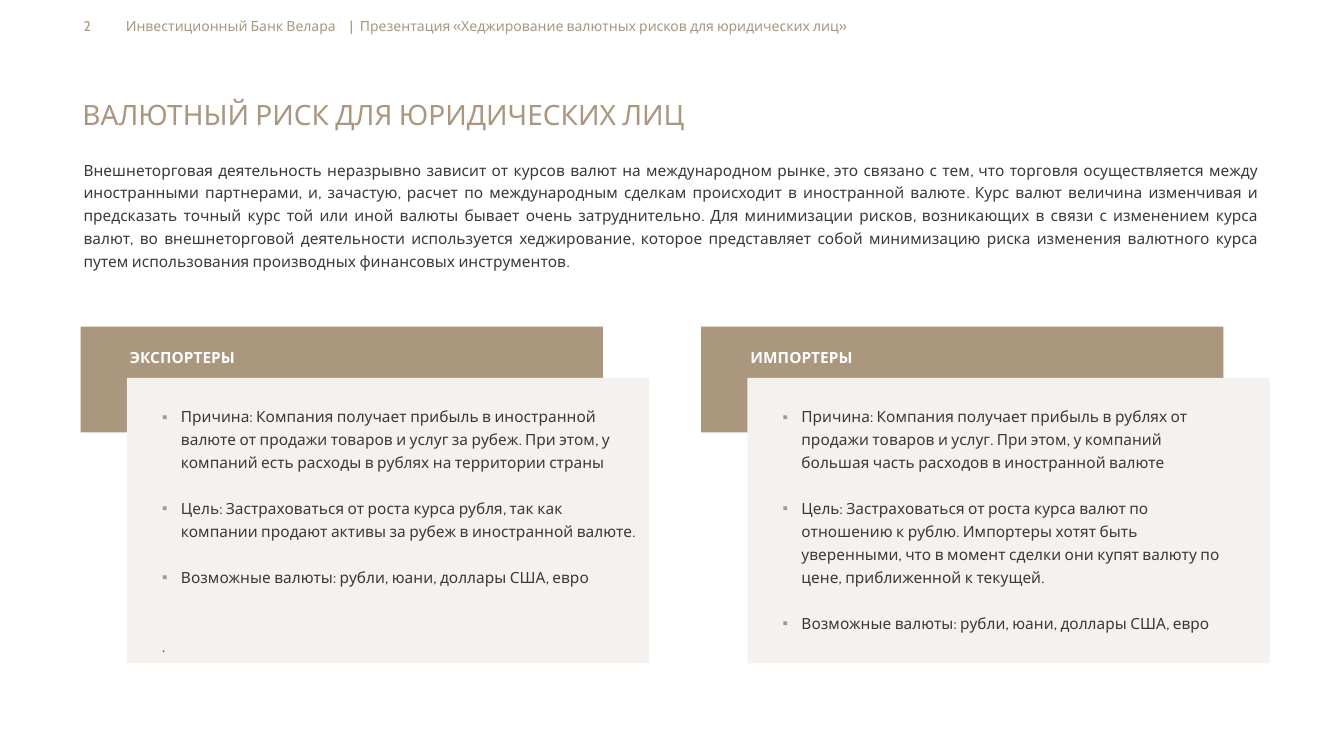
from dataclasses import dataclass

from lxml.etree import SubElement
from pptx import Presentation
from pptx.dml.color import RGBColor
from pptx.enum.shapes import MSO_SHAPE as Shape
from pptx.enum.text import MSO_ANCHOR as Anchor, PP_ALIGN as Align
from pptx.oxml.ns import qn
from pptx.slide import Slide
from pptx.text.text import TextFrame, _Paragraph as Paragraph
from pptx.util import Pt

TAN = RGBColor(0xAB, 0x96, 0x7E)
CREAM = RGBColor(0xF4, 0xF1, 0xEF)
DARK = RGBColor(0x3B, 0x38, 0x38)
WHITE = RGBColor(0xFF, 0xFF, 0xFF)
FONT = "Cabin"
LINE = 16.4
BULLET_INDENT = 13.5
CARD_LEFT = 57.6
CARD_STEP = 443.2
CARD_WIDTH = 373


@dataclass
class Card:
    title: str
    points: list[str]
    text_width: float
    closing: str = ""


CURRENCIES = "Возможные валюты: рубли, юани, доллары США, евро"
CARDS = [
    Card(
        "ЭКСПОРТЕРЫ",
        [
            "Причина: Компания получает прибыль в иностранной валюте от продажи "
            "товаров и услуг за рубеж. При этом, у компаний есть расходы в рублях "
            "на территории страны",
            "Цель: Застраховаться от роста курса рубля, так как компании продают "
            "активы за рубеж в иностранной валюте.",
            CURRENCIES,
        ],
        357.1,
        ".",
    ),
    Card(
        "ИМПОРТЕРЫ",
        [
            "Причина: Компания получает прибыль в рублях от продажи товаров и "
            "услуг. При этом, у компаний большая часть расходов в иностранной валюте",
            "Цель: Застраховаться от роста курса валют по отношению к рублю. "
            "Импортеры хотят быть уверенными, что в момент сделки они купят валюту "
            "по цене, приближенной к текущей.",
            CURRENCIES,
        ],
        336.2,
    ),
]
INTRO = (
    "Внешнеторговая деятельность неразрывно зависит от курсов валют на "
    "международном рынке, это связано с тем, что торговля осуществляется между "
    "иностранными партнерами, и, зачастую, расчет по международным сделкам "
    "происходит в иностранной валюте. Курс валют величина изменчивая и предсказать "
    "точный курс той или иной валюты бывает очень затруднительно. Для минимизации "
    "рисков, возникающих в связи с изменением курса валют, во внешнеторговой "
    "деятельности используется хеджирование, которое представляет собой минимизацию "
    "риска изменения валютного курса путем использования производных финансовых "
    "инструментов."
)
HEADER_PARTS = [
    "2",
    "Инвестиционный Банк Велара",
    "|",
    "Презентация «Хеджирование валютных рисков для юридических лиц»",
]
HEADER_TABS = [30.2, 190.3, 197.4]


def add_rect(
    slide: Slide, left: float, top: float, width: float, height: float, color: RGBColor
) -> None:
    sp = slide.shapes.add_shape(
        Shape.RECTANGLE, Pt(left), Pt(top), Pt(width), Pt(height)
    )
    sp.shadow.inherit = False
    sp.fill.solid()
    sp.fill.fore_color.rgb = color
    sp.line.fill.background()


def add_box(
    slide: Slide, left: float, top: float, width: float, height: float
) -> TextFrame:
    tf = slide.shapes.add_textbox(Pt(left), Pt(top), Pt(width), Pt(height)).text_frame
    tf.word_wrap = True
    return tf


def write(
    p: Paragraph, text: str, size: float, color: RGBColor, bold: bool = False
) -> None:
    p.text = text
    for r in p.runs:
        r.font.name = FONT
        r.font.size = Pt(size)
        r.font.bold = bold
        r.font.color.rgb = color


def add_bullet(p: Paragraph) -> None:
    pPr = p._p.get_or_add_pPr()
    pPr.set("marL", str(Pt(BULLET_INDENT)))
    pPr.set("indent", str(-Pt(BULLET_INDENT)))
    color = SubElement(pPr, qn("a:buClr"))
    SubElement(color, qn("a:srgbClr"), val=str(TAN))
    SubElement(pPr, qn("a:buFont"), typeface="Arial")
    SubElement(pPr, qn("a:buChar"), char="▪")


def add_header(slide: Slide) -> None:
    tf = add_box(slide, 52.6, 4.3, 628.6, 28.8)
    tf.vertical_anchor = Anchor.MIDDLE
    p = tf.paragraphs[0]
    tabs = SubElement(p._p.get_or_add_pPr(), qn("a:tabLst"))
    for stop in HEADER_TABS:
        SubElement(tabs, qn("a:tab"), pos=str(Pt(stop)), algn="l")
    write(p, "\t".join(HEADER_PARTS), 10, TAN)


def add_card(slide: Slide, card: Card, left: float) -> None:
    add_rect(slide, left, 233.3, CARD_WIDTH, 75.6, TAN)
    add_rect(slide, left + 33.1, 270, CARD_WIDTH, 203.8, CREAM)

    p = add_box(slide, left + 28.1, 241.9, 265, 21.6).paragraphs[0]
    p.line_spacing = Pt(LINE)
    write(p, card.title, 11, WHITE, bold=True)

    tf = add_box(slide, left + 51.1, 284.4, card.text_width, 132.5)
    for i, point in enumerate(card.points):
        p = tf.add_paragraph() if i else tf.paragraphs[0]
        p.line_spacing = Pt(LINE)
        if i:
            p.space_before = Pt(LINE)
        add_bullet(p)
        write(p, point, 11, DARK)
    if card.closing:
        p = tf.add_paragraph()
        p.line_spacing = Pt(LINE)
        p.space_before = Pt(2 * LINE)
        write(p, card.closing, 11, DARK)


def main() -> None:
    prs = Presentation()
    prs.slide_width, prs.slide_height = Pt(960), Pt(540)
    slide = prs.slides.add_slide(prs.slide_layouts[6])

    add_header(slide)
    title = add_box(slide, 51.8, 66.2, 836.6, 38.9).paragraphs[0]
    write(title, "ВАЛЮТНЫЙ РИСК ДЛЯ ЮРИДИЧЕСКИХ ЛИЦ", 20, TAN)

    intro = add_box(slide, 52.6, 108, 853.9, 90).paragraphs[0]
    intro.alignment = Align.JUSTIFY
    intro.line_spacing = Pt(LINE)
    write(intro, INTRO, 11, DARK)

    for i, card in enumerate(CARDS):
        add_card(slide, card, CARD_LEFT + i * CARD_STEP)
    prs.save("out.pptx")


if __name__ == "__main__":
    main()
